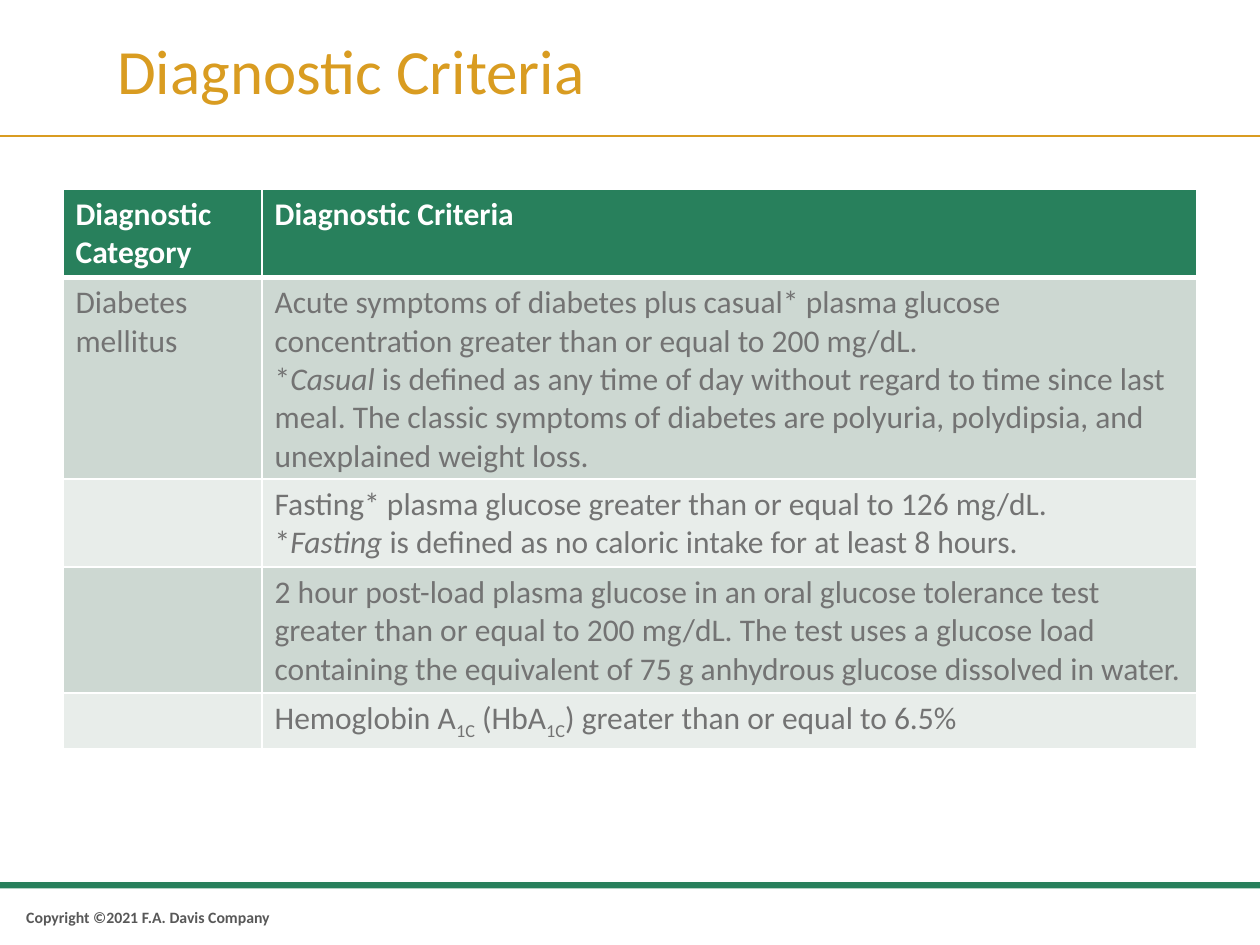
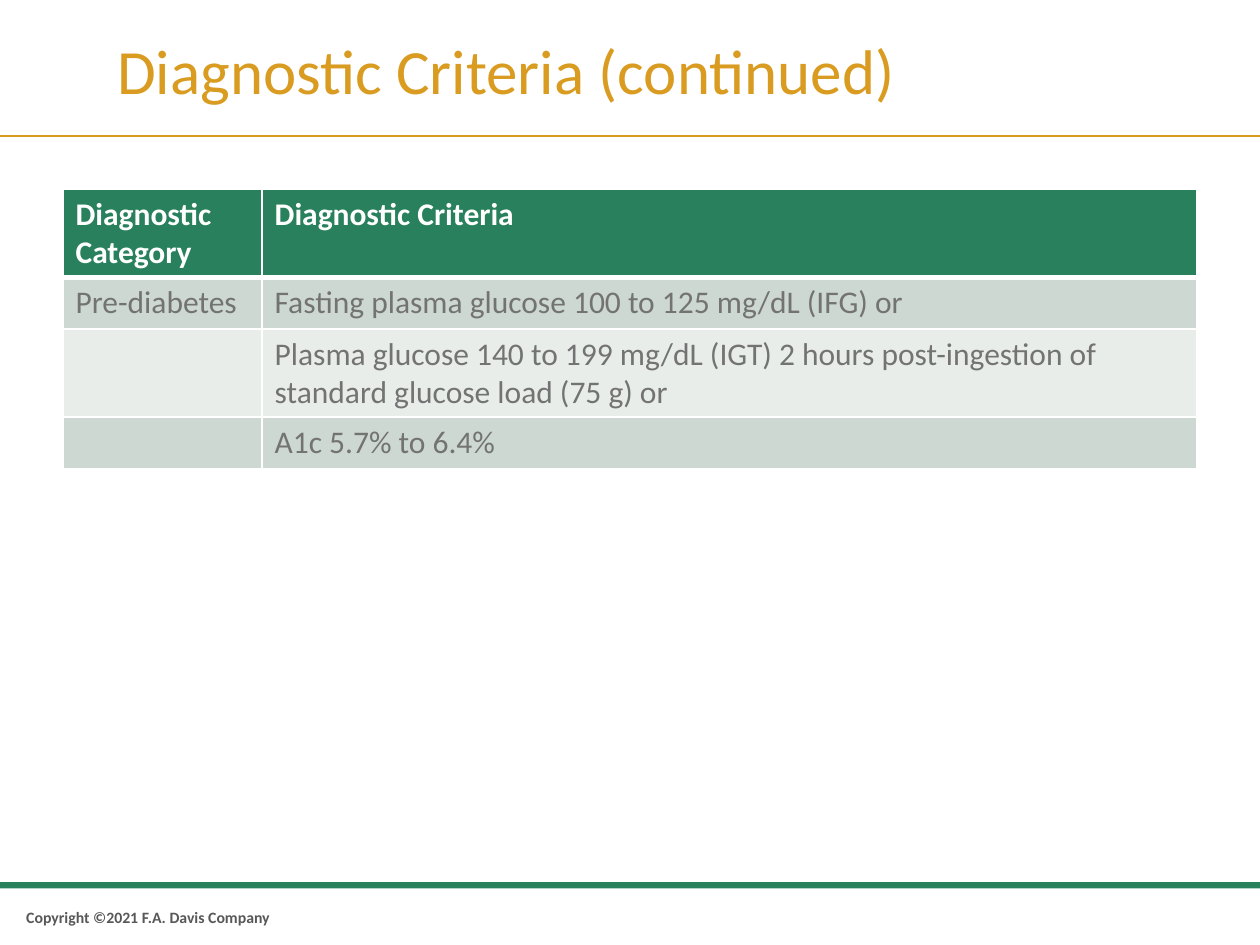
from lxml.etree import SubElement
from pptx import Presentation
from pptx.dml.color import RGBColor
from pptx.enum.shapes import MSO_CONNECTOR, MSO_SHAPE
from pptx.enum.text import MSO_ANCHOR, MSO_AUTO_SIZE, PP_ALIGN
from pptx.oxml.ns import qn
from pptx.util import Inches, Pt

FONT = "Calibri"
GOLD, GREEN, WHITE = "D99C21", "28805C", "FFFFFF"
BODY_GREY, FOOTER_GREY = "737373", "585858"
ROW_TINTS = ("CDD8D2", "E8EDEA")
COLUMNS, ROWS = 20, 15
CATEGORY_COLUMNS, CRITERIA_COLUMNS, ROW_HEIGHT = 3.16, 14.84, 0.82
COPYRIGHT = "Copyright ©2021 F.A. Davis Company"
HEADINGS = ("Diagnostic Category", "Diagnostic Criteria")

DIABETES = [
    ("Diabetes mellitus", [
        ["Acute symptoms of diabetes plus casual* plasma glucose concentration "
         "greater than or equal to 200 mg/dL."],
        ["*", ("Casual", "italic"),
         " is defined as any time of day without regard to time since last meal. "
         "The classic symptoms of diabetes are polyuria, polydipsia, and "
         "unexplained weight loss."]]),
    ("", [
        ["Fasting* plasma glucose greater than or equal to 126 mg/dL."],
        ["*", ("Fasting", "italic"),
         " is defined as no caloric intake for at least 8 hours."]]),
    ("", [["2 hour post-load plasma glucose in an oral glucose tolerance test "
           "greater than or equal to 200 mg/dL. The test uses a glucose load "
           "containing the equivalent of 75 g anhydrous glucose dissolved in water."]]),
    ("", [["Hemoglobin A", ("1C", "subscript"), " (HbA", ("1C", "subscript"),
           ") greater than or equal to 6.5%"]]),
]
PREDIABETES = [
    ("Pre-diabetes", [["Fasting plasma glucose 100 to 125 mg/dL (IFG) or"]]),
    ("", [["Plasma glucose 140 to 199 mg/dL (IGT) 2 hours post-ingestion of "
           "standard glucose load (75 g) or"]]),
    ("", [["A1c 5.7% to 6.4%"]]),
]


def color(hex_code):
    return RGBColor.from_string(hex_code)


class Deck:
    """Holds the shared style and the slide being built."""

    def __init__(self):
        self.presentation = Presentation()
        self.presentation.slide_width = Inches(10)
        self.presentation.slide_height = Inches(7.5)
        self.slide = None

    def across(self, columns):
        return round(self.presentation.slide_width * columns / COLUMNS)

    def down(self, rows):
        return round(self.presentation.slide_height * rows / ROWS)

    def box(self, left, top, width, height):
        return self.across(left), self.down(top), self.across(width), self.down(height)

    def style(self, font, size, hex_code, bold=False):
        font.name, font.size, font.bold = FONT, Pt(size), bold
        font.color.rgb = color(hex_code)

    def new_slide(self, heading):
        layout = self.presentation.slide_layouts[5]
        self.slide = self.presentation.slides.add_slide(layout)
        self.footer()
        self.rule()
        self.band()
        self.title(heading)

    def title(self, heading):
        title = self.slide.shapes.title
        title.left, title.top, title.width, title.height = self.box(1.66, 0.52, 18, 1.3)
        frame = title.text_frame
        frame.text = heading
        frame.auto_size = MSO_AUTO_SIZE.NONE
        frame.vertical_anchor = MSO_ANCHOR.MIDDLE
        paragraph = frame.paragraphs[0]
        paragraph.alignment, paragraph.line_spacing = PP_ALIGN.LEFT, 0.9
        self.style(paragraph.runs[0].font, 36, GOLD)

    def footer(self):
        frame = self.slide.shapes.add_textbox(*self.box(0.22, 14.16, 5.3, 0.8)).text_frame
        frame.text = COPYRIGHT
        frame.word_wrap = True
        frame.vertical_anchor = MSO_ANCHOR.MIDDLE
        self.style(frame.paragraphs[0].runs[0].font, 9, FOOTER_GREY, bold=True)

    def rule(self):
        level = self.down(2.16)
        rule = self.slide.shapes.add_connector(
            MSO_CONNECTOR.STRAIGHT, 0, level, self.across(COLUMNS), level)
        rule.line.color.rgb, rule.line.width = color(GOLD), Pt(1)
        SubElement(rule._element.spPr, qn("a:effectLst"))

    def band(self):
        band = self.slide.shapes.add_shape(
            MSO_SHAPE.RECTANGLE, *self.box(0, 14, COLUMNS, 0.1))
        band.shadow.inherit = False
        band.fill.solid()
        band.fill.fore_color.rgb = color(GREEN)
        band.line.fill.background()

    def borders(self, cell, top=1, bottom=1):
        properties = cell._tc.get_or_add_tcPr()
        for side, width in (("L", 1), ("R", 1), ("T", top), ("B", bottom)):
            border = SubElement(properties, qn(f"a:ln{side}"), w=str(Pt(width)))
            fill = SubElement(border, qn("a:solidFill"))
            SubElement(fill, qn("a:srgbClr"), val=WHITE)

    def cell(self, cell, paragraphs, tint, ink, bold=False):
        cell.fill.solid()
        cell.fill.fore_color.rgb = color(tint)
        frame = cell.text_frame
        for index, pieces in enumerate(paragraphs):
            paragraph = frame.add_paragraph() if index else frame.paragraphs[0]
            self.style(paragraph.font, 18, ink, bold)
            for piece in pieces:
                words, emphasis = (piece, None) if isinstance(piece, str) else piece
                run = paragraph.add_run()
                run.text = words
                self.style(run.font, 18, ink, bold)
                if emphasis == "italic":
                    run.font.italic = True
                elif emphasis == "subscript":
                    run._r.get_or_add_rPr().set("baseline", "-25000")

    def criteria_table(self, criteria):
        count = len(criteria) + 1
        table = self.slide.shapes.add_table(
            count, 2, *self.box(1, 3, CATEGORY_COLUMNS + CRITERIA_COLUMNS,
                                count * ROW_HEIGHT)).table
        for column, width in zip(table.columns, (CATEGORY_COLUMNS, CRITERIA_COLUMNS)):
            column.width = self.across(width)
        for cell, heading in zip(table.rows[0].cells, HEADINGS):
            self.borders(cell, bottom=3)
            self.cell(cell, [[heading]], GREEN, WHITE, bold=True)
        for index, (category, criterion) in enumerate(criteria):
            tint = ROW_TINTS[index % 2]
            contents = ([[category]] if category else [[]], criterion)
            for cell, paragraphs in zip(table.rows[index + 1].cells, contents):
                self.borders(cell, top=1 if index else 3)
                self.cell(cell, paragraphs, tint, BODY_GREY)


def main():
    deck = Deck()
    for heading, criteria in (("Diagnostic Criteria", DIABETES),
                              ("Diagnostic Criteria (continued)", PREDIABETES)):
        deck.new_slide(heading)
        deck.criteria_table(criteria)
    deck.presentation.save("out.pptx")


if __name__ == "__main__":
    main()
